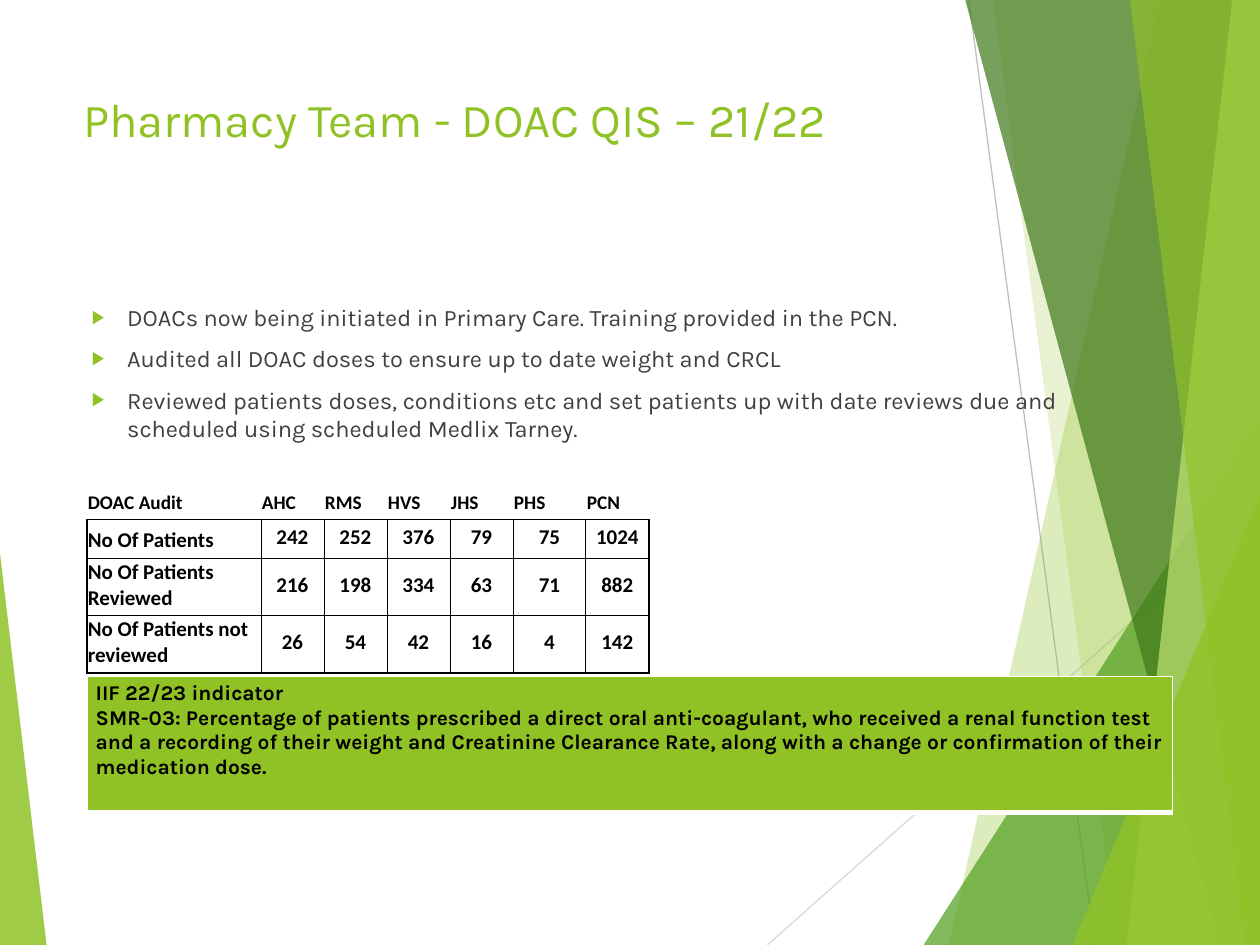
from lxml.etree import SubElement as Sub
from pptx import Presentation
from pptx.dml.color import RGBColor as RGB
from pptx.enum.shapes import MSO_CONNECTOR as Conn, MSO_SHAPE as Geo
from pptx.enum.text import MSO_ANCHOR as Anchor, MSO_AUTO_SIZE as Auto, PP_ALIGN as Align
from pptx.oxml.ns import qn
from pptx.util import Cm, Pt

HUES = {"lime": "90C226", "green": "54A021", "dark": "3F7819", "pale": "C0E474",
        "gray": "BFBFBF", "mist": "D9D9D9", "text": "404040",
        "black": "000000", "white": "FFFFFF"}
WIDE, HIGH = 25.4, 19.05
PLAIN = "{2D5ABB26-0587-4C30-8999-92F81FD0307C}"  # table style without lines


def put(item, vals):
    for key, val in vals.items():
        setattr(item, key, val)


class Deck:
    def __init__(self):
        self.prs = Presentation()
        put(self.prs, {"slide_width": Cm(WIDE), "slide_height": Cm(HIGH)})
        self.slide = self.prs.slides.add_slide(self.prs.slide_layouts[1])
        self.shapes = self.slide.shapes

    def tint(self, shape, hue, alpha):
        shape.shadow.inherit = False
        shape.fill.solid()
        shape.fill.fore_color.rgb = RGB.from_string(HUES[hue])
        clr = shape.element.spPr.find(qn("a:solidFill"))[0]
        Sub(clr, qn("a:alpha"), val=str(alpha * 1000))
        shape.line.fill.background()

    def line(self, start, end, hue):
        line = self.shapes.add_connector(Conn.STRAIGHT, *map(Cm, start + end))
        line.line.width = Pt(0.75)
        line.line.color.rgb = RGB.from_string(HUES[hue])
        Sub(line.element.spPr, qn("a:effectLst"))

    def band(self, top, base, hue, alpha):
        """Full-height band from a slanted left edge to the slide's right edge."""
        form = self.shapes.build_freeform(Cm(top), 0)
        form.add_line_segments([(Cm(WIDE), 0), (Cm(WIDE), Cm(HIGH)), (Cm(base), Cm(HIGH))])
        self.tint(form.convert_to_shape(), hue, alpha)

    def wedge(self, left, top, wide, apex, hue, alpha):
        """Triangle that stands on the slide's bottom edge."""
        box = map(Cm, (left, top, wide, HIGH - top))
        shape = self.shapes.add_shape(Geo.ISOSCELES_TRIANGLE, *box)
        shape.adjustments[0] = apex
        self.tint(shape, hue, alpha)

    def label(self, para, text, size, hue, face="Karla", bold=False):
        run = para.add_run()
        run.text = text
        put(run.font, {"name": face, "size": Pt(size), "bold": bold})
        run.font.color.rgb = RGB.from_string(HUES[hue])

    def place(self, holder, box):
        put(holder, dict(zip(("left", "top", "width", "height"), map(Cm, box))))
        self.shapes.element.append(holder.element)  # in front of the backdrop
        frame = holder.text_frame
        put(frame, {"word_wrap": True, "auto_size": Auto.NONE, "vertical_anchor": Anchor.TOP})
        return frame

    def title(self, text, box):
        para = self.place(self.shapes.title, box).paragraphs[0]
        para.alignment = Align.LEFT
        self.label(para, text, 27, "lime")

    def bullets(self, items, box):
        frame = self.place(self.slide.placeholders[1], box)
        for num, item in enumerate(items):
            para = frame.add_paragraph() if num else frame.paragraphs[0]
            para.space_before = Pt(7.5)
            self.label(para, item, 13.5, "text")
            prop = para._p.get_or_add_pPr()
            prop.set("marL", str(Cm(0.71)))
            prop.set("indent", str(Cm(-0.71)))
            clr = Sub(prop, qn("a:buClr"))
            Sub(clr, qn("a:srgbClr"), val=HUES["lime"])
            Sub(prop, qn("a:buSzPct"), val="80000")
            Sub(prop, qn("a:buChar"), char="▶")

    def grid(self, left, top, cols, rows):
        size = map(Cm, (left, top, sum(cols), sum(rows)))
        frame = self.shapes.add_table(len(rows), len(cols), *size)
        table = frame.table
        put(table, {"first_row": False, "horz_banding": False})
        table._tbl.tblPr.find(qn("a:tableStyleId")).text = PLAIN
        for col, wide in zip(table.columns, cols):
            col.width = Cm(wide)
        for row, high in zip(table.rows, rows):
            row.height = Cm(high)
        return table

    def edge(self, cell, hue, **sides):
        prop = cell._tc.get_or_add_tcPr()
        for side in "LRTB":
            if side in sides:
                line = Sub(prop, qn("a:ln" + side), w=str(Pt(sides[side])))
                fill = Sub(line, qn("a:solidFill"))
                Sub(fill, qn("a:srgbClr"), val=HUES[hue])

    def callout(self, lines, left, top, wide, high):
        cell = self.grid(left, top, [wide], [high]).cell(0, 0)
        put(cell, {"margin_left": Cm(0.18), "margin_right": Cm(0.18),
                   "margin_top": Cm(0.1), "margin_bottom": Cm(0.1)})
        self.edge(cell, "white", L=1, R=1, T=1, B=3)
        cell.fill.solid()
        cell.fill.fore_color.rgb = RGB.from_string(HUES["lime"])
        frame = cell.text_frame
        for num, text in enumerate(lines):
            para = frame.add_paragraph() if num else frame.paragraphs[0]
            self.label(para, text, 12, "black", bold=True)

    def audit(self, data, left, top, cols, rows):
        table = self.grid(left, top, cols, rows)
        end, last = len(rows) - 1, len(cols) - 1
        for r, row in enumerate(data):
            for c, text in enumerate(row):
                cell = table.cell(r, c)
                value = r > 0 and c > 0
                put(cell, {"margin_left": Cm(0.02), "margin_right": Cm(0.02),
                           "margin_top": Cm(0.02), "margin_bottom": Cm(0.1),
                           "vertical_anchor": Anchor.MIDDLE if value else Anchor.BOTTOM})
                if r:  # heavy outside, thin inside
                    self.edge(cell, "black", L=0.5 if c else 1, R=1 if c == last else 0.5,
                              T=1 if r == 1 else 0.5, B=1 if r == end else 0.5)
                else:
                    self.edge(cell, "black", B=1)
                cell.fill.background()
                para = cell.text_frame.paragraphs[0]
                para.alignment = Align.CENTER if value else Align.LEFT
                self.label(para, text, 12 if r else 11, "black", "Calibri", True)


def main():
    deck = Deck()

    # Backdrop
    deck.line((19.53, 0), (22.07, HIGH), "gray")
    deck.line((WIDE, 10.24), (15.47, HIGH), "mist")
    deck.band(23.39, 19.13, "lime", 30)
    deck.band(20.02, 22.53, "lime", 20)
    deck.wedge(18.62, 8.46, 6.78, 1, "green", 72)
    deck.band(19.46, 24.59, "dark", 70)
    deck.band(24.84, 22.71, "pale", 70)
    deck.band(22.78, 25.1, "lime", 65)
    deck.wedge(21.62, 9.98, 3.78, 1, "lime", 80)
    deck.wedge(0, 11.15, 0.94, 0, "lime", 85)

    # Title and list
    deck.title("Pharmacy Team - DOAC QIS – 21/22", (1.42, 1.7, 17.91, 3.66))
    deck.bullets([
        "DOACs now being initiated in Primary Care. Training provided in the PCN.",
        "Audited all DOAC doses to ensure up to date weight and CRCL",
        "Reviewed patients doses, conditions etc and set patients up with date reviews due "
        "and scheduled using scheduled Medlix Tarney.",
    ], (1.6, 5.97, 21.16, 9.86))

    # Indicator
    deck.callout([
        "IIF 22/23 indicator",
        "SMR-03: Percentage of patients prescribed a direct oral anti-coagulant, who received "
        "a renal function test and a recording of their weight and Creatinine Clearance Rate, "
        "along with a change or confirmation of their medication dose.",
    ], 1.75, 13.64, 21.89, 2.74)

    # Audit table
    deck.audit([
        ("DOAC Audit", "AHC", "RMS", "HVS", "JHS", "PHS", "PCN"),
        ("No Of Patients", "242", "252", "376", "79", "75", "1024"),
        ("No Of Patients Reviewed", "216", "198", "334", "63", "71", "882"),
        ("No Of Patients not reviewed", "26", "54", "42", "16", "4", "142"),
    ], 1.75, 9.53, [3.51] + [1.27] * 4 + [1.47, 1.27], [0.94, 0.79, 1.13, 1.13])

    deck.prs.save("out.pptx")


if __name__ == "__main__":
    main()
